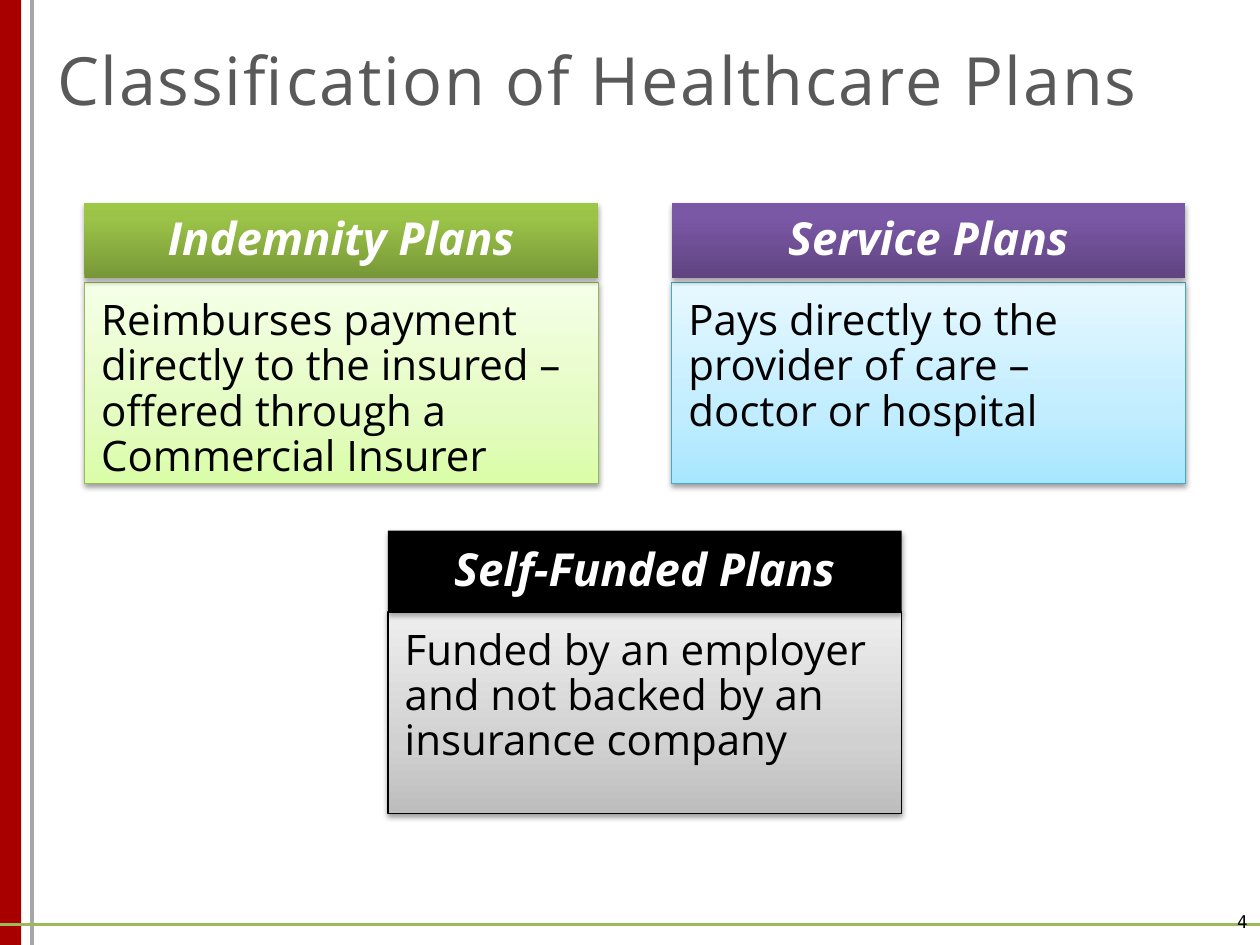
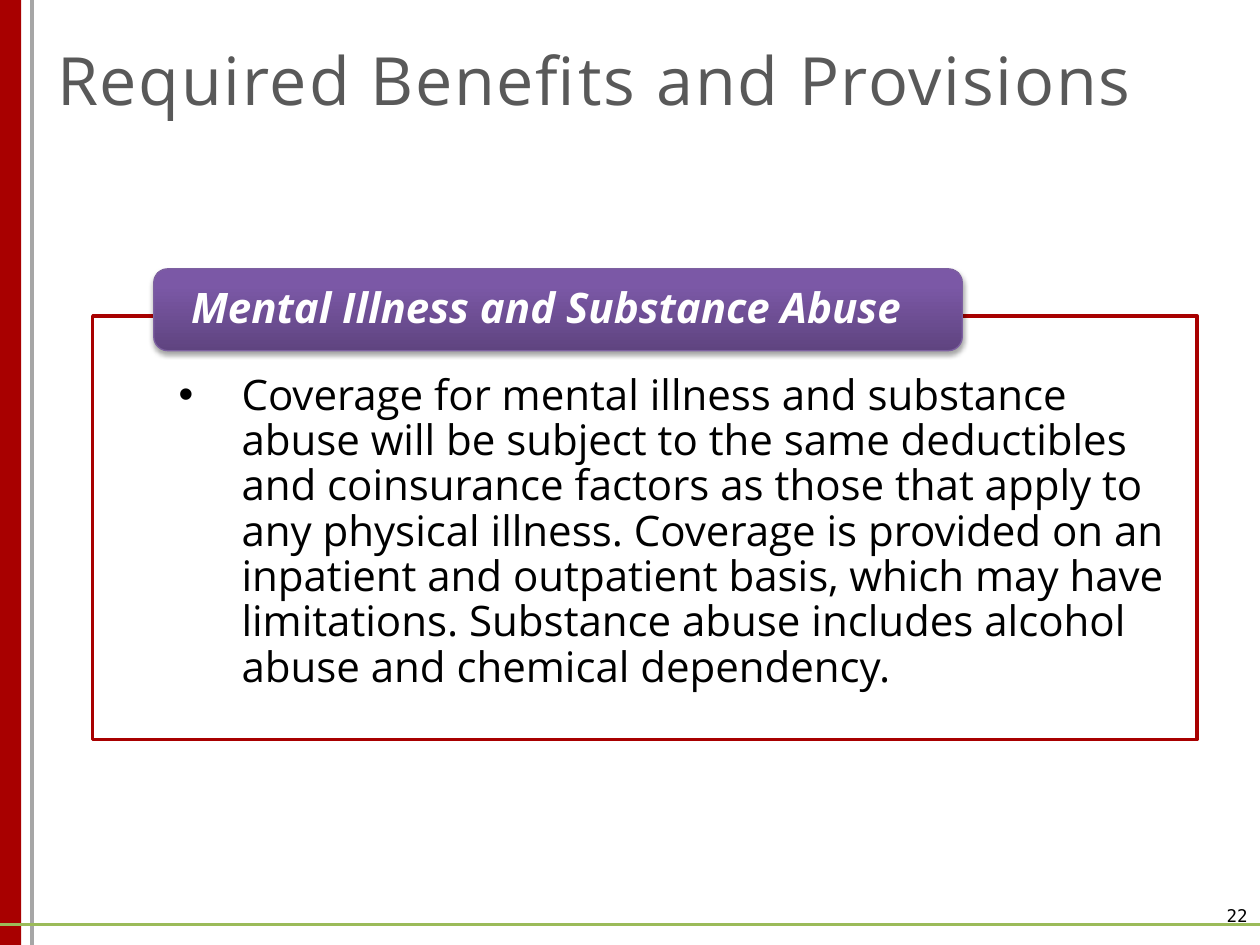
from lxml.etree import SubElement
from pptx import Presentation
from pptx.dml.color import RGBColor
from pptx.enum.shapes import MSO_CONNECTOR, MSO_SHAPE
from pptx.enum.text import MSO_ANCHOR, MSO_AUTO_SIZE, PP_ALIGN
from pptx.oxml.ns import qn
from pptx.util import Cm, Pt

FONT, NUMBER_FONT = "Open Sans", "DejaVu Sans Mono"
COLORS = {
    "red": "A80000", "rule": "A6A6A6", "green_rule": "9BBB59",
    "title": "595959", "black": "000000", "white": "FFFFFF",
    "green_edge": "98B955", "blue_edge": "46AAC5", "purple_edge": "7D60A0",
}
GRADIENTS = {
    "green": [(0, "779737"), (80, "9BC348"), (100, "9DC746")],
    "purple": [(0, "5F4480"), (80, "7B58A6"), (100, "7C57A8")],
    "pale_green": [(0, "DAFDA7"), (35, "E4FCC2"), (100, "F5FFE7")],
    "pale_blue": [(0, "A7E6FF"), (35, "C1EDFF"), (100, "E7F8FF")],
    "pale_gray": [(0, "BDBDBD"), (35, "D1D1D1"), (100, "EEEEEE")],
}
WIDTH, HEIGHT = 25.4, 19.05
CARD_W, CARD_BODY_H = 10.36, 4.06
HEADER_SHADOW, BODY_SHADOW = (35, 1.8), (38, 1.6)

PLANS = [
    {"name": "Indemnity Plans",
     "text": "Reimburses payment directly to the insured – offered through a Commercial Insurer",
     "at": (1.7, 4.09), "header_h": 1.52, "gap": 0.08,
     "header": "green", "body": "pale_green", "edge": "green_edge"},
    {"name": "Service Plans",
     "text": "Pays directly to the provider of care – doctor or hospital",
     "at": (13.54, 4.09), "header_h": 1.52, "gap": 0.08,
     "header": "purple", "body": "pale_blue", "edge": "blue_edge"},
    {"name": "Self-Funded Plans",
     "text": "Funded by an employer and not backed by an insurance company",
     "at": (7.82, 10.7), "header_h": 1.64, "gap": 0,
     "header": "black", "body": "pale_gray", "edge": "black"},
]
BENEFIT = {
    "name": "Mental Illness and Substance Abuse",
    "text": "Coverage for mental illness and substance abuse will be subject to the same "
            "deductibles and coinsurance factors as those that apply to any physical illness. "
            "Coverage is provided on an inpatient and outpatient basis, which may have "
            "limitations. Substance abuse includes alcohol abuse and chemical dependency.",
}


def rgb(name):
    return RGBColor.from_string(COLORS[name])


def paint(sp, fill):
    if fill in COLORS:
        sp.fill.solid()
        sp.fill.fore_color.rgb = rgb(fill)
        return
    sp.fill.gradient()
    sp.fill.gradient_angle = 90
    stops = sp.element.spPr.find(".//" + qn("a:gsLst"))
    for stop in list(stops):
        stops.remove(stop)
    for position, color in GRADIENTS[fill]:
        stop = SubElement(stops, qn("a:gs"), pos=str(position * 1000))
        SubElement(stop, qn("a:srgbClr"), val=color)


def add_shadow(sp, opacity, distance):
    effects = sp.element.spPr.find(qn("a:effectLst"))
    outer = SubElement(effects, qn("a:outerShdw"), blurRad=str(Pt(3.1)),
                       dist=str(Pt(distance)), dir="5400000", rotWithShape="0")
    color = SubElement(outer, qn("a:srgbClr"), val=COLORS["black"])
    SubElement(color, qn("a:alpha"), val=str(opacity * 1000))


def add_box(s, box, fill, edge=None, weight=0.75, shadow=None, kind=MSO_SHAPE.RECTANGLE):
    sp = s.shapes.add_shape(kind, *map(Cm, box))
    sp.shadow.inherit = False
    paint(sp, fill)
    if edge:
        sp.line.color.rgb = rgb(edge)
        sp.line.width = Pt(weight)
    else:
        sp.line.fill.background()
    if shadow:
        add_shadow(sp, *shadow)
    return sp


def add_line(s, ends, color, weight):
    line = s.shapes.add_connector(MSO_CONNECTOR.STRAIGHT, *map(Cm, ends))
    line.line.color.rgb = rgb(color)
    line.line.width = Pt(weight)
    SubElement(line.element.spPr, qn("a:effectLst"))


def write(sp, text, size, color="black", font=FONT, align=PP_ALIGN.LEFT,
          anchor=MSO_ANCHOR.TOP, insets=(0.25, 0.13, 0.25, 0.13), strong=False,
          spacing=None, bullet=False):
    tf = sp.text_frame
    tf.word_wrap = True
    tf.auto_size = MSO_AUTO_SIZE.NONE
    tf.vertical_anchor = anchor
    tf.margin_left, tf.margin_top, tf.margin_right, tf.margin_bottom = map(Cm, insets)
    tf.text = text
    p = tf.paragraphs[0]
    p.alignment = align
    if spacing:
        p.line_spacing = spacing
    if bullet:
        pPr = p._p.get_or_add_pPr()
        pPr.set("marL", str(Cm(1.27)))
        pPr.set("indent", str(-Cm(1.27)))
        SubElement(pPr, qn("a:buFont"), typeface="Arial")
        SubElement(pPr, qn("a:buChar"), char="•")
    r = p.runs[0]
    r.font.name = font
    r.font.size = Pt(size)
    r.font.color.rgb = rgb(color)
    if strong:
        r.font.bold = r.font.italic = True
    return r


def add_slide(prs, title, number, number_top):
    s = prs.slides.add_slide(prs.slide_layouts[5])
    add_box(s, (0, 0, 0.43, HEIGHT), "red")
    add_line(s, (0.64, 0, 0.64, HEIGHT), "rule", 2.25)
    add_line(s, (0, 18.64, WIDTH, 18.64), "green_rule", 1.5)
    heading = s.shapes.title
    heading.left, heading.top, heading.width, heading.height = map(Cm, (0.64, 0, 24.76, 3.18))
    r = write(heading, title, 38, "title", anchor=MSO_ANCHOR.MIDDLE,
              insets=(0.51, 0.13, 0.25, 0.13))
    r.font._element.set("spc", "100")
    page = s.shapes.add_textbox(*map(Cm, (23.93, number_top, 1.47, 1.02)))
    write(page, number, 10, font=NUMBER_FONT, align=PP_ALIGN.RIGHT)
    return s


def add_plan(s, plan):
    left, top = plan["at"]
    body_top = top + plan["header_h"] + plan["gap"]
    body = add_box(s, (left, body_top, CARD_W, CARD_BODY_H), plan["body"], plan["edge"],
                   shadow=BODY_SHADOW)
    write(body, plan["text"], 24, insets=(0.34, 0.34, 0.43, 0.48), spacing=0.9)
    header = add_box(s, (left, top, CARD_W, plan["header_h"]), plan["header"],
                     shadow=HEADER_SHADOW)
    write(header, plan["name"], 26, "white", align=PP_ALIGN.CENTER, anchor=MSO_ANCHOR.MIDDLE,
          insets=(0.43, 0.25, 0.43, 0.25), strong=True, spacing=0.9)


def add_benefit(s, benefit):
    frame = add_box(s, (1.87, 6.37, 22.26, 8.54), "white", "red", weight=2)
    write(frame, benefit["text"], 24, insets=(1.73, 1.17, 0.5, 0.43), spacing=0.9, bullet=True)
    label = add_box(s, (3.1, 5.42, 16.3, 1.65), "purple", "purple_edge",
                    shadow=HEADER_SHADOW, kind=MSO_SHAPE.ROUNDED_RECTANGLE)
    label.adjustments[0] = 0.17
    write(label, benefit["name"], 24, "white", anchor=MSO_ANCHOR.MIDDLE,
          insets=(0.67, 0.08, 0.67, 0.08), strong=True, spacing=0.9)


def main():
    prs = Presentation()
    prs.slide_width, prs.slide_height = Cm(WIDTH), Cm(HEIGHT)
    s = add_slide(prs, "Classification of Healthcare Plans", "4", 18.24)
    for plan in PLANS:
        add_plan(s, plan)
    s = add_slide(prs, "Required Benefits and Provisions", "22", 18.11)
    add_benefit(s, BENEFIT)
    prs.save("out.pptx")


if __name__ == "__main__":
    main()
